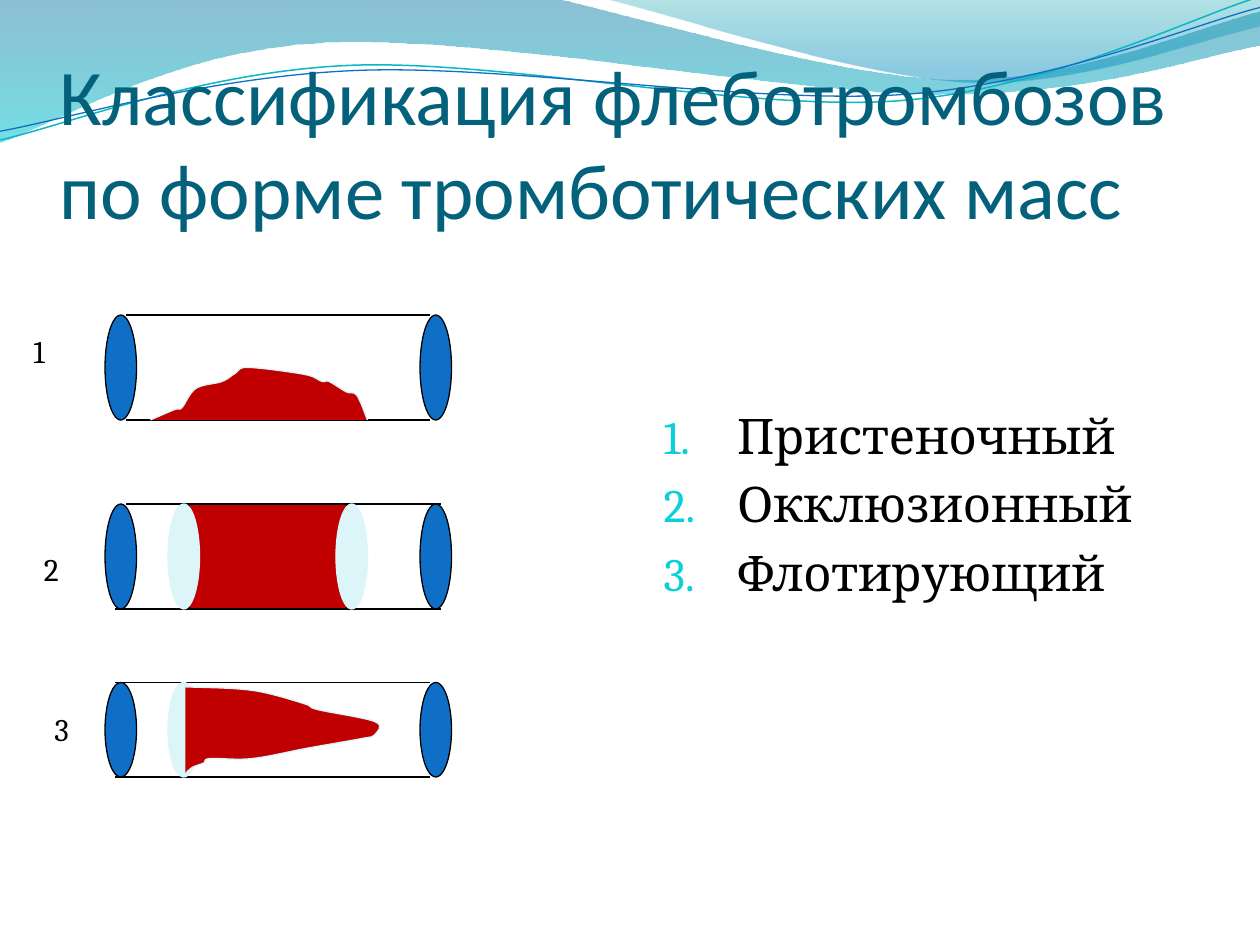
"""Build a slide on the forms of venous thrombi."""
import pptx
import pptx.dml.color
import pptx.enum.shapes
import pptx.enum.text
import pptx.oxml
import pptx.oxml.ns
import pptx.util

Pt = pptx.util.Pt
qn = pptx.oxml.ns.qn
SHAPE = pptx.enum.shapes.MSO_SHAPE
ANCHOR = pptx.enum.text.MSO_ANCHOR
BLACK, BLUE, RED, PALE = "000000", "0F6FC6", "C00000", "DBF5F9"
CYAN, TITLE, TEAL = "0BD0D9", "04617B", "0AB8BF"

WIDE, HIGH = 720, 540
LEFT, SPAN, CAP = 60, 180, 18
NAMES = ("Пристеночный", "Окклюзионный", "Флотирующий")


def color(code):
    """Turn a hex string into a colour."""
    return pptx.dml.color.RGBColor.from_string(code)


def node(tag, **attrs):
    """Make an empty drawing element."""
    item = pptx.oxml.parse_xml(f'<a:{tag} {pptx.oxml.ns.nsdecls("a")}/>')
    for name, value in attrs.items():
        item.set(name, str(value))
    return item


def paint(shape, fill=None, line=None, width=0.75):
    """Set the fill and line of a shape."""
    shape.shadow.inherit = False
    if fill:
        shape.fill.solid()
        shape.fill.fore_color.rgb = color(fill)
    else:
        shape.fill.background()
    if line:
        shape.line.color.rgb = color(line)
        shape.line.width = Pt(width)
    else:
        shape.line.fill.background()


def fade(shape, *stops):
    """Fill a shape from top to bottom with (place, colour, percent opaque)."""
    shape.fill.gradient()
    shape.fill.gradient_angle = 270
    for stop, (place, code, _) in zip(shape.fill.gradient_stops, stops):
        stop.position = place
        stop.color.rgb = color(code)
    tints = shape.element.spPr.find(qn("a:gradFill")).iter(qn("a:srgbClr"))
    for tint, (_, _, alpha) in zip(tints, stops):
        tint.append(node("alpha", val=alpha * 1000))


def smooth(knots):
    """Yield two handles and an end for each step of a Catmull-Rom curve."""
    ring = [knots[0], *knots, knots[-1]]
    for prior, start, end, after in zip(ring, ring[1:], ring[2:], ring[3:]):
        yield [(s + (e - p) / 6, e - (a - s) / 6, e)
               for p, s, e, a in zip(prior, start, end, after)]


def curve(slide, *strands, close=False, **look):
    """Draw smooth strands of knots, joined by straight lines."""
    spots, bends = [], []
    for strand in strands:
        spots.append(strand[0])
        for xs, ys in smooth(strand):
            bends.append(len(spots) - 1)
            spots += zip(xs, ys)
    spots = [(Pt(x), Pt(y)) for x, y in spots]
    pen = slide.shapes.build_freeform(*spots[0])
    pen.add_line_segments(spots[1:], close=close)
    shape = pen.convert_to_shape()
    steps = list(shape.element.iter(qn("a:lnTo")))
    for i in bends:
        steps[i].tag = qn("a:cubicBezTo")
        for step in steps[i + 1:i + 3]:
            steps[i].append(step[0])
            step.getparent().remove(step)
    paint(shape, **look)
    return shape


def block(slide, kind, x, y, w, h, **look):
    """Add a preset shape."""
    shape = slide.shapes.add_shape(kind, Pt(x), Pt(y), Pt(w), Pt(h))
    paint(shape, **look)


def wall(slide, start, end, y):
    """Draw a vessel wall."""
    kind = pptx.enum.shapes.MSO_CONNECTOR.STRAIGHT
    line = slide.shapes.add_connector(kind, Pt(start), Pt(y), Pt(end), Pt(y))
    line.line.color.rgb = color(BLACK)
    line.line.width = Pt(0.75)
    line.element.spPr.append(node("effectLst"))


def vessel(slide, y, h, upper, lower):
    """Draw two walls and the blue ends of a vessel."""
    wall(slide, *upper, y)
    wall(slide, *lower, y + h)
    for x in (LEFT + SPAN, LEFT):
        block(slide, SHAPE.OVAL, x, y, CAP, h, fill=BLUE, line=BLACK)


def clot(slide, base, *knots):
    """Draw a clot from knots given as (distance along, height over base)."""
    spots = [(LEFT + along, base - up) for along, up in knots]
    curve(slide, spots, fill=RED, line=PALE)


def mural(slide, y, h):
    """Draw a clot that sits on the lower wall."""
    rise = [(26, 0), (40, 6), (44, 7), (52, 18), (67, 22), (75, 27), (82, 30)]
    fall = [(114, 26), (124, 22), (128, 22), (138, 16), (144, 14), (150, 0)]
    clot(slide, y + h, *rise, *fall)


def plug(slide, y, h):
    """Draw a clot that fills the vessel."""
    start, length = LEFT + 48, 90
    block(slide, SHAPE.RECTANGLE, start, y, length, h, fill=RED, line=BLACK)
    for x in (start + length - 6, start - 12):
        block(slide, SHAPE.OVAL, x, y, CAP, h, fill=PALE, line=PALE)


def floater(slide, y, h):
    """Draw a clot that tapers along the axis from its root."""
    block(slide, SHAPE.OVAL, LEFT + 36, y, CAP, h, fill=PALE, line=PALE)
    upper = [(46, 24.5), (84, 22.5), (113.5, 15), (121.5, 11.5), (154.5, 4.5)]
    lower = [(154, -3), (147, -5), (116, -10.5), (84, -16.5), (60, -16.5),
             (56.5, -19), (50, -21.5), (46, -25)]
    clot(slide, y + h / 2, *upper, *lower)


def waves(slide):
    """Draw the two bands and two lines across the top."""
    crest = [(317, -0.7), (546, 45.4), (WIDE, 6.5)]
    swell = [(WIDE, 26), (537, 54), (185, 24.5), (-0.7, 81.4)]
    band = curve(slide, [(0, 0)], crest, swell, close=True)
    fade(band, (0, "0074A1", 45), (1, "00C6CF", 55))
    dip = [(345, -0.7), (554, 46.8), (WIDE, 15)]
    band = curve(slide, dip, [(WIDE, 0)], close=True)
    fade(band, (0, "00A1A9", 30), (0.8, "008BBF", 45))
    curve(slide, [(0, 80), (199.4, 37.4), (513.4, 57.6), (718.6, -1.4)],
          line=TEAL, width=0.85)
    curve(slide, [(0, 75), (203.8, 40.3), (516.2, 54), (WIDE, 4.3)], line=BLUE)


def write(para, words, size=18, font="Cambria", ink=BLACK, before=0):
    """Put formatted text in a paragraph."""
    para.alignment = pptx.enum.text.PP_ALIGN.LEFT
    para.space_before = Pt(before)
    run = para.add_run()
    run.text = words
    run.font.size = Pt(size)
    run.font.name = font
    run.font.color.rgb = color(ink)


def count(para, indent=42):
    """Number a paragraph in a list."""
    props = para._p.get_or_add_pPr()
    props.set("marL", str(Pt(indent)))
    props.set("indent", str(Pt(-indent)))
    tint = node("buClr")
    tint.append(node("srgbClr", val=CYAN))
    props.extend([tint, node("buSzPct", val=95000),
                  node("buFont", typeface="Calibri"),
                  node("buAutoNum", type="arabicPeriod")])


def place(shape, x, y, w, h, anchor=ANCHOR.TOP):
    """Move a text shape and return its frame."""
    shape.left, shape.top, shape.width, shape.height = map(Pt, (x, y, w, h))
    frame = shape.text_frame
    frame.word_wrap = True
    frame.auto_size = pptx.enum.text.MSO_AUTO_SIZE.NONE
    frame.vertical_anchor = anchor
    return frame


def main():
    """Build and save the slide."""
    deck = pptx.Presentation()
    deck.slide_width, deck.slide_height = Pt(WIDE), Pt(HIGH)
    slide = deck.slides.add_slide(deck.slide_layouts[1])
    title, body = slide.placeholders
    waves(slide)
    slide.shapes._spTree.extend([title.element, body.element])

    frame = place(title, 34, 22.5, 664, 112, ANCHOR.BOTTOM)
    frame.margin_left = frame.margin_right = frame.margin_bottom = 0
    write(frame.paragraphs[0],
          "Классификация флеботромбозов по форме тромботических масс",
          size=45, font="Calibri", ink=TITLE)
    frame = place(body, 372, 228, 294, 252)
    for i, name in enumerate(NAMES):
        para = frame.add_paragraph() if i else frame.paragraphs[0]
        write(para, name, size=28, before=5.6)
        count(para)

    rows = ((mural, 180, 60, (72, 246), (72, 246), 186),
            (plug, 288, 60, (72, 252), (66, 252), 311),
            (floater, 390, 54, (66, 246), (66, 246), 402))
    for i, (fill, y, h, upper, lower, top) in enumerate(rows):
        vessel(slide, y, h, upper, lower)
        fill(slide, y, h)
        box = slide.shapes.add_textbox(0, 0, 0, 0)
        frame = place(box, 12 + 6 * i, top, 30, 36)
        write(frame.paragraphs[0], str(i + 1), before=9)
    deck.save("out.pptx")


if __name__ == "__main__":
    main()
